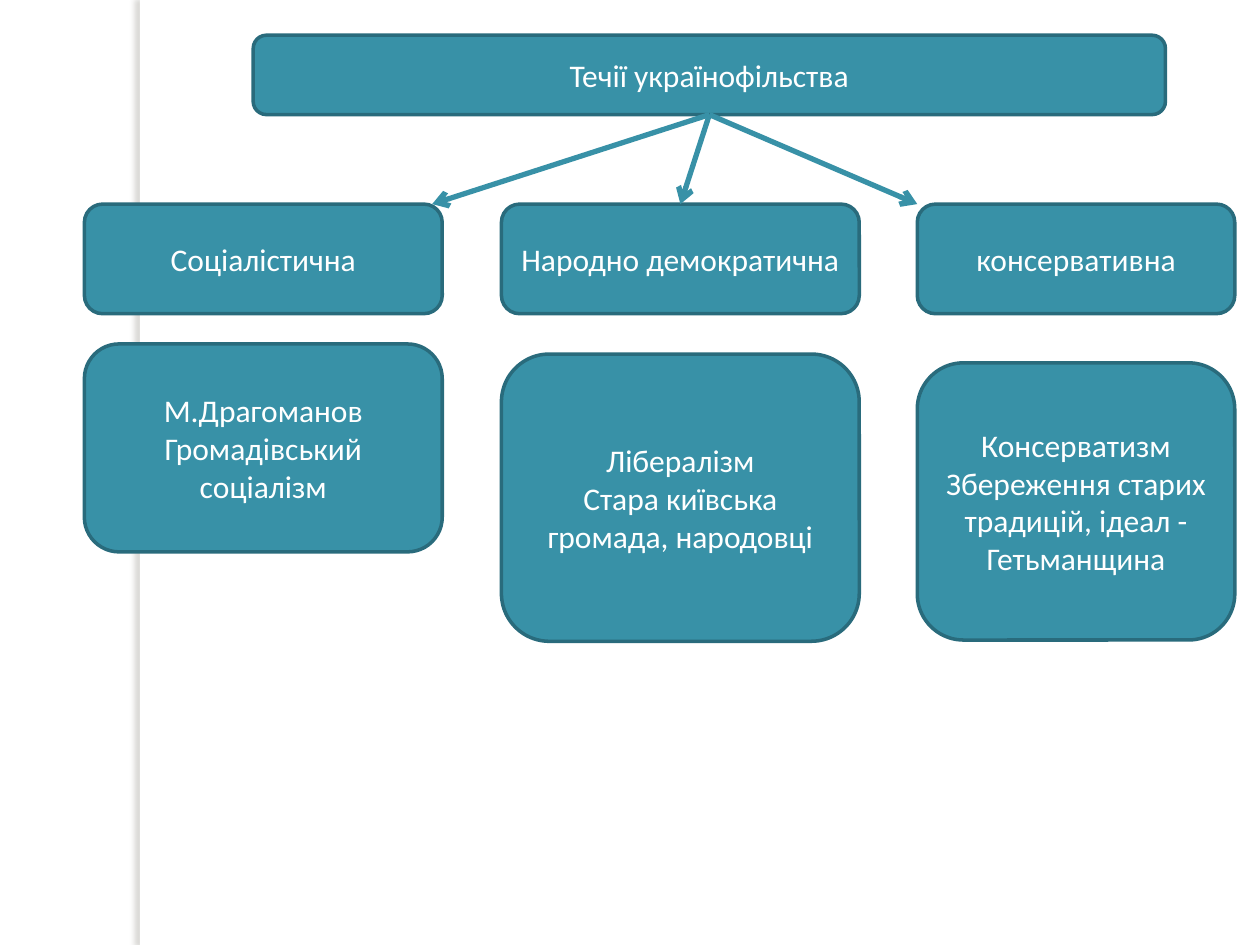
"""Build a slide charting the three currents of Ukrainophilism."""
import pptx
import pptx.dml.color
import pptx.enum.shapes
import pptx.enum.text
import pptx.oxml
import pptx.oxml.ns
import pptx.util

Inches, Pt = pptx.util.Inches, pptx.util.Pt
RGB = pptx.dml.color.RGBColor.from_string
SHAPE = pptx.enum.shapes.MSO_SHAPE
THEME = {
    "white": RGB("FFFFFF"), "teal": RGB("3891A7"), "edge": RGB("296B7C"),
    "shadow": "736F63", "font": "Calibri", "size": Pt(18),
    "border": Pt(2), "arrow": Pt(3),
}
FONT = {"name": THEME["font"], "size": THEME["size"]}
NS = pptx.oxml.ns.nsdecls("a")


def add_box(s, x, y, w, h, lines):
    sp = s.shapes.add_shape(SHAPE.ROUNDED_RECTANGLE, Inches(x), Inches(y), Inches(w), Inches(h))
    sp.shadow.inherit = False
    sp.fill.solid()
    sp.fill.fore_color.rgb = THEME["teal"]
    sp.line.color.rgb = THEME["edge"]
    sp.line.width = THEME["border"]
    tf = sp.text_frame
    tf.word_wrap = True
    tf.vertical_anchor = pptx.enum.text.MSO_ANCHOR.MIDDLE
    for i, line in enumerate(lines):
        p = tf.add_paragraph() if i else tf.paragraphs[0]
        p.alignment = pptx.enum.text.PP_ALIGN.CENTER
        r = p.add_run()
        r.text = line
        for key, value in FONT.items():
            setattr(r.font, key, value)
        r.font.color.rgb = THEME["white"]
    return sp


prs = pptx.Presentation()
prs.slide_width, prs.slide_height = Inches(10), Inches(7.5)
s = prs.slides.add_slide(prs.slide_layouts[6])

strip = s.shapes.add_shape(SHAPE.RECTANGLE, Inches(1.11), 0, Inches(0.08), prs.slide_height)
strip.fill.solid()
strip.fill.fore_color.rgb = THEME["white"]
strip.line.fill.background()
strip._element.spPr.append(pptx.oxml.parse_xml(
    f'<a:effectLst {NS}><a:outerShdw blurRad="{Pt(3)}" dist="{Pt(3)}" dir="10800000" '
    f'algn="ctr" rotWithShape="0"><a:srgbClr val="{THEME["shadow"]}"><a:alpha val="25000"/>'
    '</a:srgbClr></a:outerShdw></a:effectLst>'))

title = add_box(s, 2.01, 0.28, 7.24, 0.63, ["Течії українофільства"])

head_y, head_h = 1.62, 0.87
currents = [
    (0.67, 2.84, "Соціалістична", 2.73, 1.65, ["М.Драгоманов", "Громадівський соціалізм"], 3.43),
    (3.98, 2.84, "Народно демократична", 2.81, 2.28,
     ["Лібералізм", "Стара київська громада, народовці"], None),
    (7.28, 2.52, "консервативна", 2.88, 2.2,
     ["Консерватизм", "Збереження старих традицій, ідеал - Гетьманщина"], 7.28),
]
targets = []
for x, w, name, y, h, lines, corner_x in currents:
    head = add_box(s, x, head_y, w, head_h, [name])
    add_box(s, x, y, w, h, lines)
    targets.append((head, corner_x))

for head, corner_x in targets:
    end_x = Inches(corner_x) if corner_x else head.left + head.width // 2
    arrow = s.shapes.add_connector(
        pptx.enum.shapes.MSO_CONNECTOR.STRAIGHT,
        title.left + title.width // 2, title.top + title.height, end_x, head.top)
    arrow.begin_connect(title, 2)
    if corner_x is None:
        arrow.end_connect(head, 0)
    arrow.line.color.rgb = THEME["teal"]
    arrow.line.width = THEME["arrow"]
    arrow.line._get_or_add_ln().append(pptx.oxml.parse_xml(f'<a:tailEnd {NS} type="arrow"/>'))
    arrow._element.spPr.append(pptx.oxml.parse_xml(f"<a:effectLst {NS}/>"))

prs.save("out.pptx")
